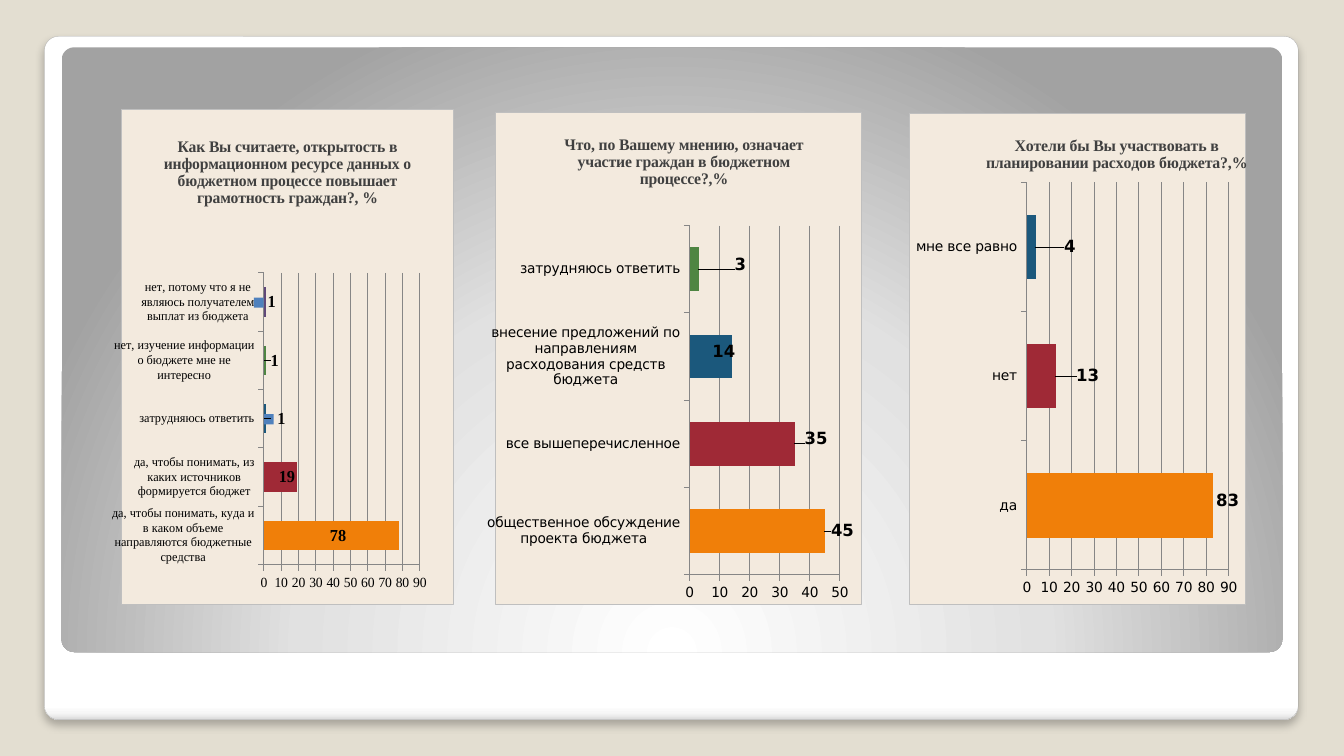
from pptx import Presentation
from pptx.chart.data import CategoryChartData
from pptx.dml.color import RGBColor
from pptx.enum.chart import XL_CHART_TYPE as CT, XL_LABEL_POSITION as LP, XL_TICK_MARK as TM
from pptx.enum.shapes import MSO_SHAPE
from pptx.oxml import parse_xml
from pptx.oxml.ns import nsdecls
from pptx.util import Pt


def rgb(value):
    return RGBColor.from_string(value)


def set_layout(parent, index, target="", **values):
    for old in parent.xpath("c:layout"):
        parent.remove(old)
    names = [k for k in "xywh" if k in values]
    modes = "".join(f'<c:{k}Mode val="edge"/>' for k in names if "edge" in values)
    sizes = "".join(f'<c:{k} val="{values[k]}"/>' for k in names)
    parent.insert(index, parse_xml(
        f'<c:layout {nsdecls("c")}><c:manualLayout>{target}{modes}{sizes}'
        '</c:manualLayout></c:layout>'))


SERIF, SANS = "Times New Roman", "DejaVu Sans"
COLORS = ["F07F09", "9F2936", "1B587C", "4E8542", "604878"]

prs = Presentation()
prs.slide_width, prs.slide_height = Pt(960), Pt(540)
s = prs.slides.add_slide(prs.slide_layouts[6])
s.background.fill.solid()
s.background.fill.fore_color.rgb = rgb("E3DED1")

panels = [
    ((31.7, 25.9, 895.7, 488.2),
     [(0, "FFFFFF"), (98, "FFFFFF"), (99, "F7F7F7"), (100, "DADADA")],
     '<a:lin ang="5400000" scaled="0"/>'),
    ((44, 33.8, 872, 432),
     [(0, "FFFFFF"), (55, "E1E1E1"), (100, "A2A2A2")],
     '<a:path path="circle"><a:fillToRect l="50000" t="175000" r="50000" b="-75000"/></a:path>'),
]
frames = []
for box, stops, direction in panels:
    sp = s.shapes.add_shape(MSO_SHAPE.ROUNDED_RECTANGLE, *map(Pt, box))
    sp.adjustments[0] = 0.021
    sp.shadow.inherit = False
    sp.line.fill.background()
    sp.fill.background()
    marks = "".join(f'<a:gs pos="{pos * 1000}"><a:srgbClr val="{color}"/></a:gs>'
                    for pos, color in stops)
    spPr = sp.element.spPr
    spPr.replace(spPr.xpath("a:noFill")[0], parse_xml(
        f'<a:gradFill {nsdecls("a")} rotWithShape="1"><a:gsLst>{marks}</a:gsLst>'
        f'{direction}</a:gradFill>'))
    frames.append(sp)

outer = frames[0]
outer.line.color.rgb = rgb("A4A4A4")
outer.line.width = Pt(0.16)
outer.element.spPr.xpath("a:effectLst")[0].append(parse_xml(
    f'<a:outerShdw {nsdecls("a")} blurRad="{Pt(6)}" dist="{Pt(4)}" dir="5400000" '
    'algn="tl" rotWithShape="0"><a:srgbClr val="000000"><a:alpha val="25000"/>'
    '</a:srgbClr></a:outerShdw>'))

charts = [
    dict(box=(348, 80, 268, 352), font=SANS, cat_size=10, pos=LP.INSIDE_END,
         title="Что, по Вашему мнению, означает участие граждан в бюджетном процессе?,%",
         title_at=(0.18, 0.04), plot=(0.53, 0.23, 0.41, 0.71), keys=[],
         rows=[("общественное обсуждение проекта бюджета", 45, 0.09, 0),
               ("все вышеперечисленное", 35, 0.1, -0.01),
               ("внесение предложений по направлениям расходования средств бюджета", 14, 0.02, -0.01),
               ("затрудняюсь ответить", 3, 0.14, -0.01)]),
    dict(box=(649, 81, 244, 351), font=SANS, cat_size=10, pos=LP.INSIDE_END,
         title="Хотели бы Вы участвовать в планировании расходов бюджета?,%",
         title_at=(0.22, 0.04), plot=(0.35, 0.14, 0.6, 0.79), keys=[],
         rows=[("да", 83, 0.09, -0.01),
               ("нет", 13, 0.14, 0),
               ("мне все равно", 4, 0.13, 0)]),
    dict(box=(80, 78, 244, 354), font=SERIF, cat_size=9, pos=LP.CENTER,
         title="Как Вы считаете, открытость в информационном ресурсе данных о "
               "бюджетном процессе повышает грамотность граждан?, %",
         title_at=(0.12, 0.05), plot=(0.43, 0.33, 0.47, 0.59), keys=[2, 4],
         rows=[("да, чтобы понимать, куда и в каком объеме направляются бюджетные средства", 78, 0.02, 0),
               ("да, чтобы понимать, из каких источников формируется бюджет", 19, 0.02, 0),
               ("затрудняюсь ответить", 1, 0.03, 0),
               ("нет, изучение информации о бюджете мне не интересно", 1, 0.03, 0),
               ("нет, потому что я не являюсь получателем выплат из бюджета", 1, 0, 0)]),
]
charts[0]["plot"] = (0.53, 0.23, 0.41, 0.71)

for c in charts:
    data = CategoryChartData()
    data.categories = [row[0] for row in c["rows"]]
    data.add_series("Series 1", [row[1] for row in c["rows"]])
    chart = s.shapes.add_chart(CT.BAR_CLUSTERED, *map(Pt, c["box"]), data).chart
    chart.has_legend = False
    chart.font.name = c["font"]
    chart.font.size = Pt(10)
    chart.font.color.rgb = rgb("000000")

    chart.has_title = True
    tf = chart.chart_title.text_frame
    tf.text = c["title"]
    font = tf.paragraphs[0].runs[0].font
    font.name, font.size, font.bold = SERIF, Pt(11.5), True
    font.color.rgb = rgb("404040")

    cat, val = chart.category_axis, chart.value_axis
    cat.tick_labels.font.size = Pt(c["cat_size"])
    val.has_major_gridlines = True
    for axis in (cat, val):
        axis.major_tick_mark = TM.OUTSIDE
        axis.minor_tick_mark = TM.NONE
        axis.format.line.color.rgb = rgb("868686")
    val.major_gridlines.format.line.color.rgb = rgb("868686")
    val.minimum_scale = 0
    val.maximum_scale = 50 if max(row[1] for row in c["rows"]) < 50 else 90
    val.major_unit = 10

    plot = chart.plots[0]
    plot.gap_width = 100
    plot.vary_by_categories = False
    series = plot.series[0]
    labels = series.data_labels
    labels.show_value = True
    labels.position = c["pos"]
    label_fonts = [labels.font]
    for i in range(len(c["rows"])):
        point = series.points[i]
        point.format.fill.solid()
        point.format.fill.fore_color.rgb = rgb(COLORS[i])
        point.data_label.position = c["pos"]
        label_fonts.append(point.data_label.font)
    for font in label_fonts:
        font.name, font.size, font.bold = c["font"], Pt(12), True
        font.color.rgb = rgb("000000")

    root = chart.element
    for i, (label, row) in enumerate(zip(root.xpath(".//c:dLbl"), c["rows"])):
        set_layout(label, 1, x=row[2], y=row[3])
        if i in c["keys"]:
            label.xpath("c:showLegendKey")[0].set("val", "1")
    set_layout(root.xpath(".//c:chart/c:title")[0], 1, edge=True,
               **dict(zip("xy", c["title_at"])))
    set_layout(root.xpath(".//c:plotArea")[0], 0, '<c:layoutTarget val="inner"/>',
               edge=False, **dict(zip("xywh", c["plot"])))
    for manual in root.xpath(".//c:plotArea/c:layout/c:manualLayout"):
        for mode in manual.xpath("c:wMode|c:hMode"):
            manual.remove(mode)
    root.xpath("c:txPr")[0].addprevious(parse_xml(
        f'<c:spPr {nsdecls("c", "a")}><a:solidFill><a:srgbClr val="F3EADE"/></a:solidFill>'
        f'<a:ln w="{Pt(0.75)}"><a:solidFill><a:srgbClr val="BFBFBF"/></a:solidFill></a:ln></c:spPr>'))

prs.save("out.pptx")
